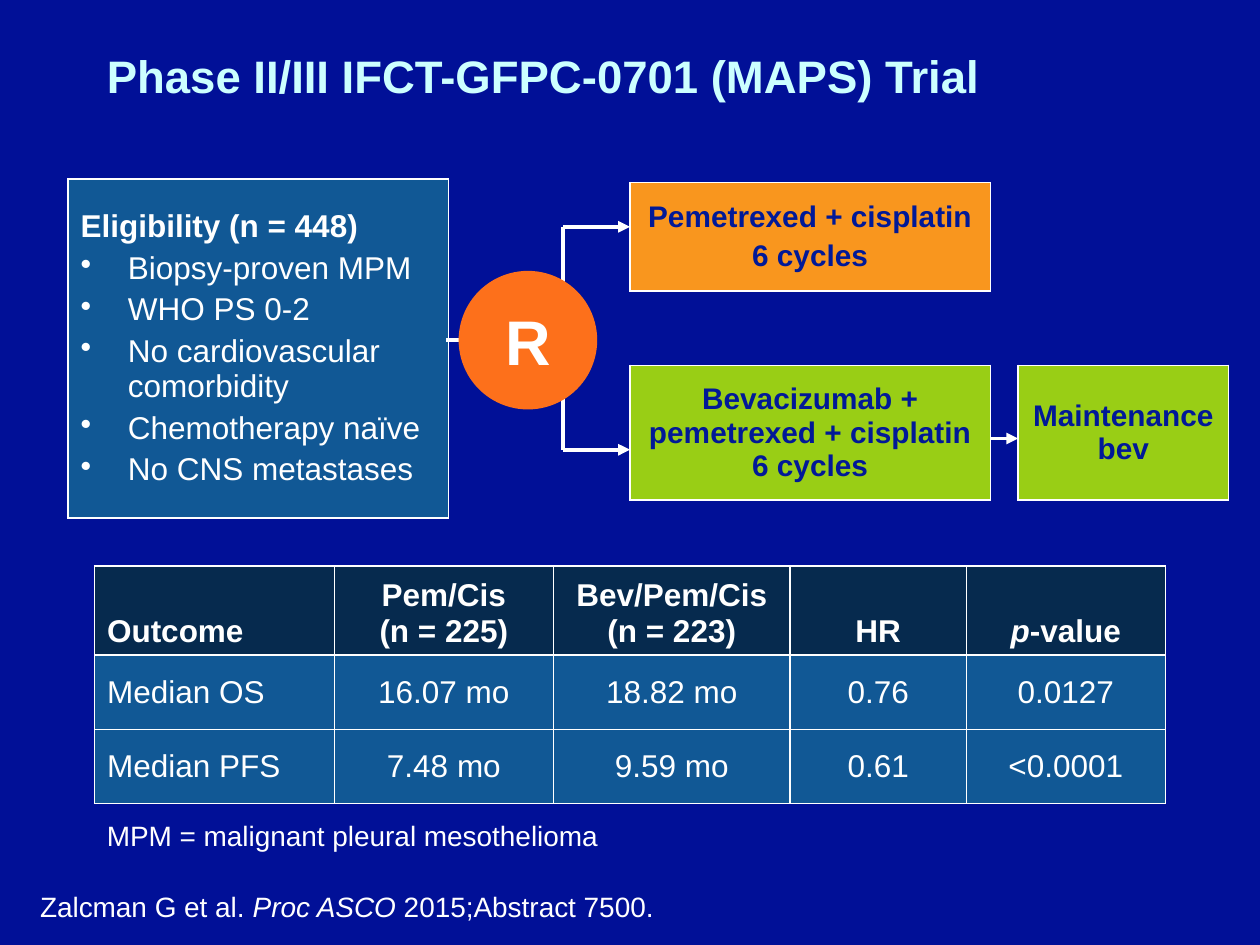
from dataclasses import dataclass, replace

from lxml import etree
from pptx import Presentation
from pptx.dml.color import RGBColor
from pptx.enum.shapes import MSO_CONNECTOR, MSO_SHAPE
from pptx.enum.text import MSO_ANCHOR, PP_ALIGN
from pptx.oxml.ns import qn
from pptx.util import Pt

STRAIGHT = MSO_CONNECTOR.STRAIGHT
ELLIPSE = MSO_SHAPE.OVAL
TOP, MIDDLE, BOTTOM = MSO_ANCHOR.TOP, MSO_ANCHOR.MIDDLE, MSO_ANCHOR.BOTTOM
LEFT, CENTER = PP_ALIGN.LEFT, PP_ALIGN.CENTER

FONT = "Arial"
COLORS = {
    "background": "011097",
    "title": "CCFFFF",
    "white": "FFFFFF",
    "navy": "011997",
    "panel": "115895",
    "header": "062A4E",
    "control": "F9961E",
    "bevacizumab": "99CE15",
    "randomization": "FD701B",
}


@dataclass(frozen=True)
class Style:
    size: float
    color: str = "white"
    bold: bool = False
    align: PP_ALIGN = LEFT
    space_before: float = 0
    line_spacing: float = 1
    bulleted: bool = False


@dataclass(frozen=True)
class Line:
    """A paragraph; words between asterisks are italic."""
    text: str
    style: Style


@dataclass(frozen=True)
class Box:
    left: float
    top: float
    width: float
    height: float
    fill: str
    lines: list[Line]


@dataclass(frozen=True)
class Link:
    x1: float
    y1: float
    x2: float
    y2: float
    arrow: bool = False


@dataclass(frozen=True)
class Caption:
    left: float
    top: float
    width: float
    height: float
    line: Line
    anchor: MSO_ANCHOR = TOP


BODY = Style(18, space_before=3.6)
BOLD = replace(BODY, bold=True)
BULLET = replace(BODY, bulleted=True)
ARM = Style(17, "navy", True, CENTER, 3.4)
NOTE = Style(16)

ARM_LEFT, ARM_WIDTH = 360, 205.9
BEV_TOP, BEV_HEIGHT = 208.8, 77
BRANCH_X = 321.8

BOXES = [
    Box(38.9, 102.2, 217.4, 193.7, "panel", [
        Line("Eligibility (n = 448)", BOLD),
        *(Line(text, BULLET) for text in (
            "Biopsy-proven MPM", "WHO PS 0-2", "No cardiovascular comorbidity",
            "Chemotherapy naïve", "No CNS metastases")),
    ]),
    Box(ARM_LEFT, 104.4, ARM_WIDTH, 61.9, "control",
        [Line("Pemetrexed + cisplatin", ARM), Line("6 cycles", ARM)]),
    Box(ARM_LEFT, BEV_TOP, ARM_WIDTH, BEV_HEIGHT, "bevacizumab",
        [Line("Bevacizumab + pemetrexed + cisplatin\n6 cycles", ARM)]),
    Box(581.8, BEV_TOP, 120.2, BEV_HEIGHT, "bevacizumab",
        [Line("Maintenance bev", ARM)]),
]
MAINTENANCE_LINK = Link(543.6, 250.6, 581.8, 250.6, arrow=True)
RANDOMIZATION_LINKS = [
    Link(254.9, 194.4, 341.3, 194.4),
    Link(BRANCH_X, 180.7, BRANCH_X, 129.6),
    Link(BRANCH_X, 129.6, ARM_LEFT, 129.6, arrow=True),
    Link(BRANCH_X, 156.2, BRANCH_X, 257),
    Link(BRANCH_X, 257, ARM_LEFT, 257, arrow=True),
]
CAPTIONS = [
    Caption(54, 0, 612, 90, Line("Phase II/III IFCT-GFPC-0701 (MAPS) Trial",
                                 Style(26, "title", True, line_spacing=0.9)), MIDDLE),
    Caption(54, 464.4, 563.8, 26.6, Line("MPM = malignant pleural mesothelioma", NOTE)),
    Caption(15.8, 504.7, 704.2, 26.6,
            Line("Zalcman G et al. *Proc ASCO *2015;Abstract 7500.", NOTE)),
]
OUTCOMES = [
    ["Outcome", "Pem/Cis\n(n = 225)", "Bev/Pem/Cis\n(n = 223)", "HR", "*p*-value"],
    ["Median OS", "16.07 mo", "18.82 mo", "0.76", "0.0127"],
    ["Median PFS", "7.48 mo", "9.59 mo", "0.61", "<0.0001"],
]
OUTCOME_WIDTHS = [137, 125.3, 135.2, 100.7, 113.8]
OUTCOME_HEIGHTS = [51, 42.5, 42.5]


def rgb(name: str) -> RGBColor:
    return RGBColor.from_string(COLORS[name])


def write_lines(text_frame, lines: list[Line]) -> None:
    for index, line in enumerate(lines):
        style = line.style
        paragraph = text_frame.add_paragraph() if index else text_frame.paragraphs[0]
        plain, *parts = line.text.split("*")
        paragraph.text = plain
        for number, part in enumerate(parts):
            run = paragraph.add_run()
            run.text = part
            run.font.italic = number % 2 == 0
        paragraph.alignment = style.align
        paragraph.space_before = Pt(style.space_before)
        paragraph.line_spacing = style.line_spacing
        for run in paragraph.runs:
            run.font.name = FONT
            run.font.size = Pt(style.size)
            run.font.bold = style.bold
            run.font.color.rgb = rgb(style.color)
        if style.bulleted:
            properties = paragraph._p.get_or_add_pPr()
            properties.set("marL", str(Pt(27)))
            properties.set("indent", str(-Pt(27)))
            etree.SubElement(properties, qn("a:buChar"), char="•")


def fill_cell(cell, fill: str, lines: list[Line], anchor: MSO_ANCHOR) -> None:
    properties = cell._tc.get_or_add_tcPr()
    for side in ("lnL", "lnR", "lnT", "lnB"):
        border = etree.SubElement(properties, qn(f"a:{side}"), w=str(Pt(1)))
        solid = etree.SubElement(border, qn("a:solidFill"))
        etree.SubElement(solid, qn("a:srgbClr"), val=COLORS["white"])
    cell.fill.solid()
    cell.fill.fore_color.rgb = rgb(fill)
    cell.vertical_anchor = anchor
    write_lines(cell.text_frame, lines)


def add_grid(slide, left: float, top: float, widths: list[float], heights: list[float]):
    """Add a table without banding and return it."""
    table = slide.shapes.add_table(len(heights), len(widths), Pt(left), Pt(top),
                                   Pt(sum(widths)), Pt(sum(heights))).table
    table.first_row = table.horz_banding = False
    for column, width in zip(table.columns, widths):
        column.width = Pt(width)
    for row, height in zip(table.rows, heights):
        row.height = Pt(height)
    return table


def draw_box(slide, box: Box) -> None:
    table = add_grid(slide, box.left, box.top, [box.width], [box.height])
    fill_cell(table.cell(0, 0), box.fill, box.lines, MIDDLE)


def draw_link(slide, link: Link) -> None:
    connector = slide.shapes.add_connector(
        STRAIGHT, Pt(link.x1), Pt(link.y1), Pt(link.x2), Pt(link.y2))
    connector.line.color.rgb = rgb("white")
    connector.line.width = Pt(2.25)
    if link.arrow:
        etree.SubElement(connector.line._get_or_add_ln(), qn("a:tailEnd"), type="triangle")
    etree.SubElement(connector._element.spPr, qn("a:effectLst"))


def draw_randomization(slide) -> None:
    circle = slide.shapes.add_shape(ELLIPSE, Pt(262.1), Pt(154.8), Pt(79.2), Pt(79.2))
    circle.shadow.inherit = False
    circle.fill.solid()
    circle.fill.fore_color.rgb = rgb("randomization")
    circle.line.fill.background()
    circle.text_frame.word_wrap = False
    circle.text_frame.vertical_anchor = MIDDLE
    write_lines(circle.text_frame, [Line("R", Style(36, bold=True, align=CENTER))])


def draw_caption(slide, caption: Caption) -> None:
    text_frame = slide.shapes.add_textbox(Pt(caption.left), Pt(caption.top),
                                          Pt(caption.width), Pt(caption.height)).text_frame
    text_frame.word_wrap = True
    text_frame.vertical_anchor = caption.anchor
    write_lines(text_frame, [caption.line])


def draw_outcomes(slide) -> None:
    table = add_grid(slide, 54, 323.3, OUTCOME_WIDTHS, OUTCOME_HEIGHTS)
    for row, texts in enumerate(OUTCOMES):
        fill, style, anchor = ("panel", BODY, MIDDLE) if row else ("header", BOLD, BOTTOM)
        for column, text in enumerate(texts):
            aligned = replace(style, align=CENTER if column else LEFT)
            fill_cell(table.cell(row, column), fill, [Line(text, aligned)], anchor)


def main() -> None:
    presentation = Presentation()
    presentation.slide_width, presentation.slide_height = Pt(720), Pt(540)
    slide = presentation.slides.add_slide(presentation.slide_layouts[6])
    slide.background.fill.solid()
    slide.background.fill.fore_color.rgb = rgb("background")

    draw_link(slide, MAINTENANCE_LINK)
    for box in BOXES:
        draw_box(slide, box)
    for link in RANDOMIZATION_LINKS:
        draw_link(slide, link)
    draw_randomization(slide)
    draw_outcomes(slide)
    for caption in CAPTIONS:
        draw_caption(slide, caption)
    presentation.save("out.pptx")


if __name__ == "__main__":
    main()
